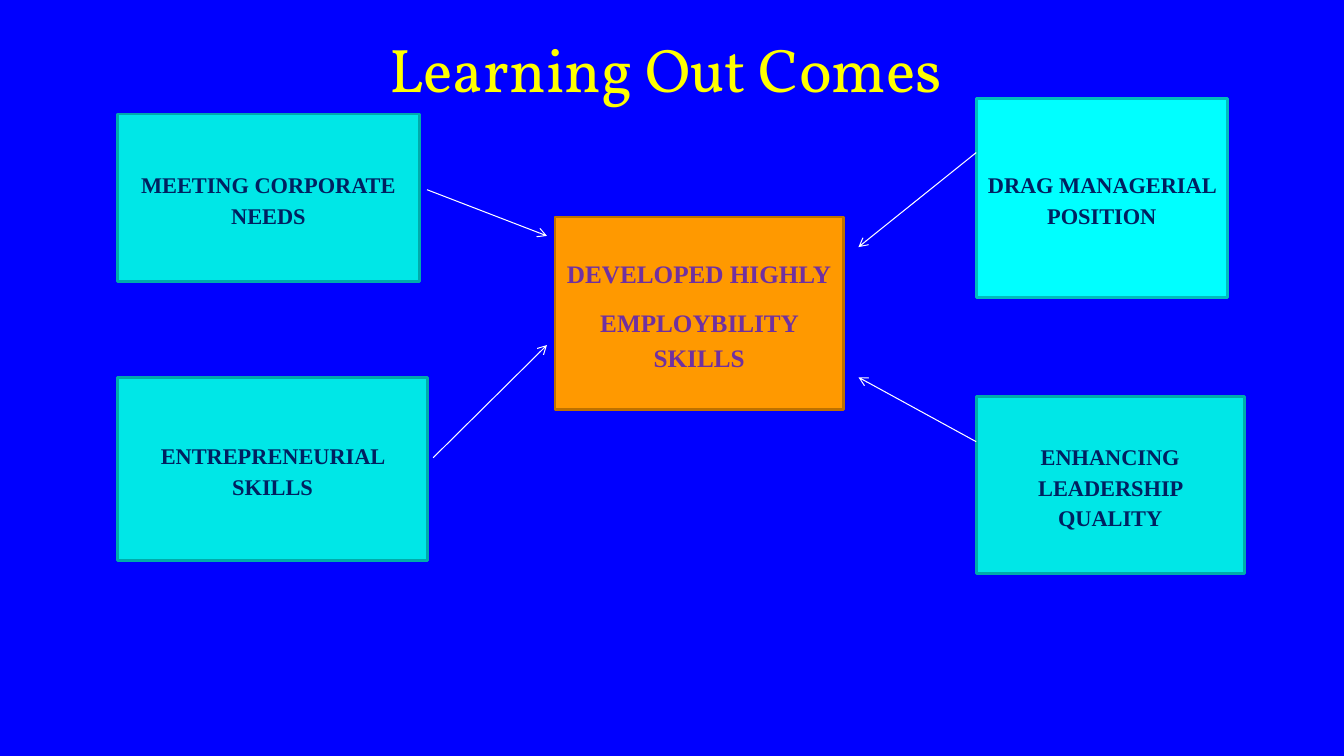
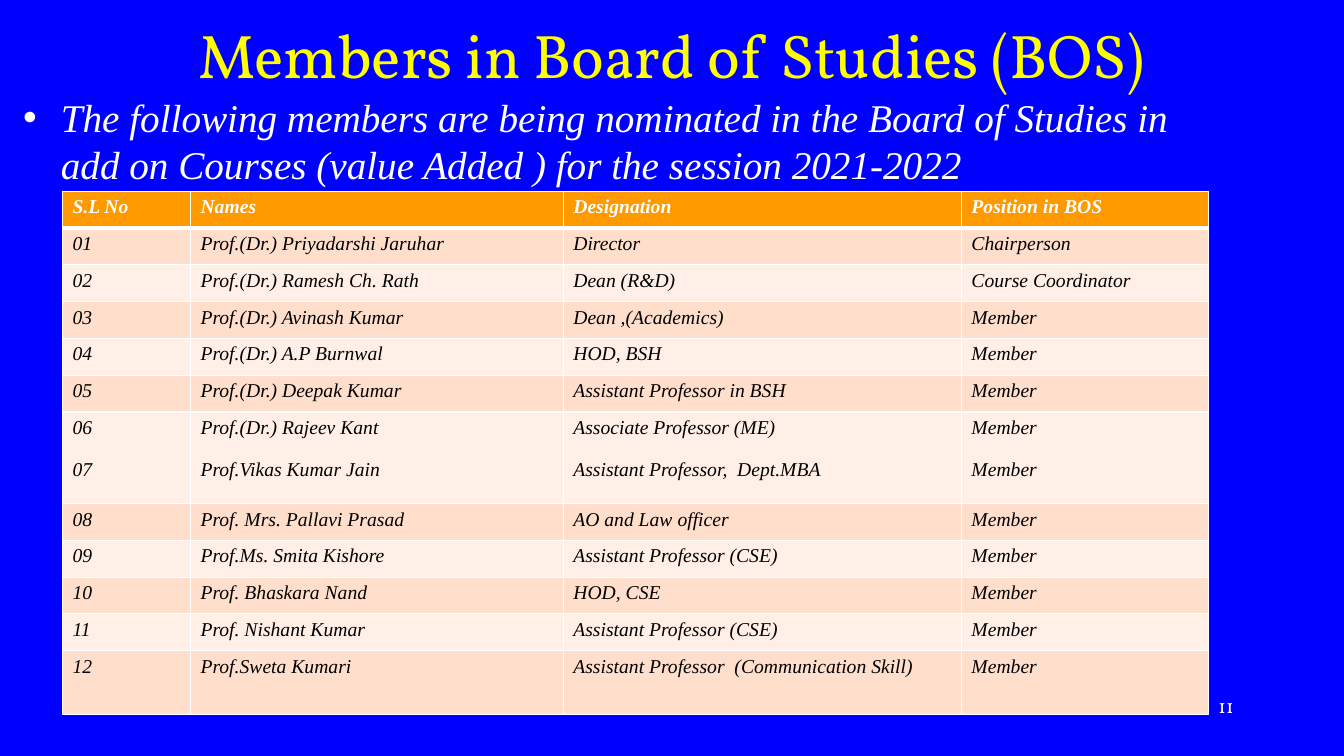
import pptx
import pptx.dml.color
import pptx.enum.shapes
import pptx.enum.text
import pptx.oxml.ns
import pptx.util
from lxml import etree

Pt = pptx.util.Pt
RGBColor = pptx.dml.color.RGBColor
Align = pptx.enum.text.PP_ALIGN
Anchor = pptx.enum.text.MSO_ANCHOR
qn = pptx.oxml.ns.qn

BLUE = RGBColor(0x00, 0x00, 0xFF)
YELLOW = RGBColor(0xFF, 0xFF, 0x00)
WHITE = RGBColor(0xFF, 0xFF, 0xFF)
BLACK = RGBColor(0x00, 0x00, 0x00)
NAVY = RGBColor(0x00, 0x20, 0x60)
PURPLE = RGBColor(0x70, 0x30, 0xA0)
ORANGE = RGBColor(0xFF, 0x99, 0x00)
BROWN = RGBColor(0xBD, 0x71, 0x00)
CYAN = RGBColor(0x00, 0xFF, 0xFF)
CYAN_EDGE = RGBColor(0x00, 0xBD, 0xBD)
TEAL = RGBColor(0x00, 0xE7, 0xE7)
TEAL_EDGE = RGBColor(0x00, 0xAB, 0xAB)
PEACH = RGBColor(0xFF, 0xDE, 0xCC)
PALE_PEACH = RGBColor(0xFF, 0xEF, 0xE7)

TITLE_FONT = "Vollkorn"
TEXT_FONT = "Times New Roman"

OUTCOMES = [
    (["DEVELOPED HIGHLY", "EMPLOYBILITY SKILLS"], (312.4, 71.5, 206, 137.5), ORANGE, BROWN, PURPLE, 18),
    (["DRAG MANAGERIAL POSITION"], (613.3, -13, 179.5, 142), CYAN, CYAN_EDGE, NAVY, 16),
    (["ENHANCING LEADERSHIP QUALITY"], (613.3, 200, 191.5, 126), TEAL, TEAL_EDGE, NAVY, 16),
    (["MEETING CORPORATE NEEDS"], (0, -2, 215.5, 119.5), TEAL, TEAL_EDGE, NAVY, 16),
    (["ENTREPRENEURIAL SKILLS"], (0, 186, 221.5, 131), TEAL, TEAL_EDGE, NAVY, 16),
]
ARROWS = [
    ((221, 52), (306.7, 85)),
    ((613.3, 25.5), (529.2, 93)),
    ((225.4, 243.5), (306.7, 163)),
    ((613.3, 232), (529.2, 186)),
]

HEADINGS = ["S.L No", "Names", "Designation", "Position in BOS"]
MEMBERS = [
    ["01", "Prof.(Dr.) Priyadarshi Jaruhar", "Director", "Chairperson"],
    ["02", "Prof.(Dr.) Ramesh Ch. Rath", "Dean (R&D)", "Course Coordinator"],
    ["03", "Prof.(Dr.) Avinash Kumar", "Dean ,(Academics)", "Member"],
    ["04", "Prof.(Dr.) A.P Burnwal", "HOD, BSH", "Member"],
    ["05", "Prof.(Dr.) Deepak Kumar", "Assistant Professor in BSH", "Member"],
    ["06\n07", "Prof.(Dr.) Rajeev Kant\nProf.Vikas Kumar Jain",
     "Associate Professor (ME)\nAssistant Professor,  Dept.MBA", "Member\nMember"],
    ["08", "Prof. Mrs. Pallavi Prasad", "AO and Law officer", "Member"],
    ["09", "Prof.Ms. Smita Kishore", "Assistant Professor (CSE)", "Member"],
    ["10", "Prof. Bhaskara Nand", "HOD, CSE", "Member"],
    ["11", "Prof. Nishant Kumar", "Assistant Professor (CSE)", "Member"],
    ["12", "Prof.Sweta Kumari", "Assistant Professor  (Communication Skill)", "Member"],
]
COLUMN_WIDTHS = [91.5, 266.3, 284.4, 176.4]
ROW_HEIGHT = 26.3
TALL_ROWS = {6: 65.4, 11: 45.8}


def points(box):
    """Turn a tuple of numbers into lengths."""
    return [Pt(value) for value in box]


def add_run(paragraph, text, size, color, font=TEXT_FONT, bold=False, italic=False):
    """Add one styled run to a paragraph."""
    run = paragraph.add_run()
    run.text = text
    run.font.name = font
    run.font.size = Pt(size)
    run.font.bold = bold
    run.font.italic = italic
    run.font.color.rgb = color


def add_paragraphs(frame, lines):
    """Yield a paragraph of the frame with each line of text."""
    for index, line in enumerate(lines):
        yield (frame.add_paragraph() if index else frame.paragraphs[0]), line


def add_text_box(slide, box, anchor=Anchor.TOP):
    """Add a wrapping text box and return its frame."""
    frame = slide.shapes.add_textbox(*points(box)).text_frame
    frame.word_wrap = True
    frame.vertical_anchor = anchor
    return frame


def add_titled_slide(presentation, title, top, height):
    """Add a blue slide with a centred yellow title."""
    slide = presentation.slides.add_slide(presentation.slide_layouts[6])
    slide.background.fill.solid()
    slide.background.fill.fore_color.rgb = BLUE
    paragraph = add_text_box(slide, (72, top, 816, height), Anchor.MIDDLE).paragraphs[0]
    paragraph.alignment = Align.CENTER
    paragraph.space_before = Pt(24)
    add_run(paragraph, title, 44, YELLOW, TITLE_FONT)
    return slide


def add_outcome(slide, lines, box, fill, edge, color, size):
    """Add one outlined box with bold centred text."""
    shape = slide.shapes.add_shape(pptx.enum.shapes.MSO_SHAPE.RECTANGLE, *points(box))
    shape.shadow.inherit = False
    shape.fill.solid()
    shape.fill.fore_color.rgb = fill
    shape.line.color.rgb = edge
    shape.line.width = Pt(2)
    frame = shape.text_frame
    frame.word_wrap = True
    frame.vertical_anchor = Anchor.MIDDLE
    for paragraph, line in add_paragraphs(frame, lines):
        paragraph.alignment = Align.CENTER
        paragraph.line_spacing = 1.15
        paragraph.space_after = Pt(10)
        add_run(paragraph, line, size, color, bold=True)


def add_arrow(slide, start, end):
    """Add a thin white arrow."""
    connector = slide.shapes.add_connector(
        pptx.enum.shapes.MSO_CONNECTOR.STRAIGHT, *points(start + end))
    connector.line.color.rgb = WHITE
    connector.line.width = Pt(0.75)
    properties = connector.element.spPr
    etree.SubElement(properties.find(qn("a:ln")), qn("a:tailEnd"), type="arrow")
    etree.SubElement(properties, qn("a:effectLst"))


def add_outcome_diagram(slide, left, top):
    """Place the skill boxes and the arrows to the centre."""
    for lines, (x, y, width, height), *style in OUTCOMES:
        add_outcome(slide, lines, (left + x, top + y, width, height), *style)
    for start, end in ARROWS:
        add_arrow(slide, *[(left + x, top + y) for x, y in (start, end)])


def add_bullet(slide, box, text):
    """Add an italic bulleted statement."""
    paragraph = add_text_box(slide, box).paragraphs[0]
    paragraph.space_before = Pt(5.6)
    properties = paragraph._p.get_or_add_pPr()
    properties.set("marL", str(Pt(27)))
    properties.set("indent", str(-Pt(27)))
    etree.SubElement(properties, qn("a:buFont"), typeface="Arial")
    etree.SubElement(properties, qn("a:buChar"), char="•")
    add_run(paragraph, text, 28, WHITE, italic=True)


def add_borders(cell, bottom):
    """Draw white borders around a cell."""
    properties = cell._tc.get_or_add_tcPr()
    for side, width in (("L", 1), ("R", 1), ("T", 1), ("B", bottom)):
        line = etree.SubElement(properties, qn("a:ln" + side), w=str(Pt(width)))
        fill = etree.SubElement(line, qn("a:solidFill"))
        etree.SubElement(fill, qn("a:srgbClr"), val=str(WHITE))


def fill_cell(cell, text, fill, color, header):
    """Write and colour one table cell."""
    add_borders(cell, 3 if header else 1)
    cell.fill.solid()
    cell.fill.fore_color.rgb = fill
    for paragraph, line in add_paragraphs(cell.text_frame, text.split("\n")):
        if paragraph is not cell.text_frame.paragraphs[0] and line != text.split("\n")[0]:
            paragraph.space_before = Pt(14.6)
        add_run(paragraph, line, 14, color, bold=header, italic=True)
    for paragraph in cell.text_frame.paragraphs[1:]:
        paragraph.space_before = Pt(14.6)


def add_member_table(slide, left, top):
    """Add the table of board members."""
    rows = [HEADINGS] + MEMBERS
    heights = [TALL_ROWS.get(index, ROW_HEIGHT) for index in range(len(rows))]
    box = points((left, top, sum(COLUMN_WIDTHS), sum(heights)))
    table = slide.shapes.add_table(len(rows), len(HEADINGS), *box).table
    table.first_row = table.horz_banding = False
    for column, width in zip(table.columns, COLUMN_WIDTHS):
        column.width = Pt(width)
    for index, texts in enumerate(rows):
        table.rows[index].height = Pt(heights[index])
        header = index == 0
        fill = ORANGE if header else PEACH if index % 2 else PALE_PEACH
        for cell, text in zip(table.rows[index].cells, texts):
            fill_cell(cell, text, fill, WHITE if header else BLACK, header)


def add_page_number(slide, box, number):
    """Add the page number at the lower right."""
    paragraph = add_text_box(slide, box).paragraphs[0]
    paragraph.alignment = Align.RIGHT
    add_run(paragraph, number, 14, WHITE, TITLE_FONT)


def main():
    """Build and save both slides."""
    presentation = pptx.Presentation()
    presentation.slide_width = Pt(960)
    presentation.slide_height = Pt(540)

    outcomes = add_titled_slide(presentation, "Learning Out Comes ", 23, 51)
    add_outcome_diagram(outcomes, 84, 83.5)

    members = add_titled_slide(presentation, "Members in Board of Studies (BOS)", 11, 55.5)
    add_bullet(members, (9.4, 63.4, 878.5, 468),
               "The following members are being nominated in the Board of Studies in "
               "add on Courses (value Added ) for the session 2021-2022")
    add_page_number(members, (688.3, 491.8, 200, 36), "11")
    add_member_table(members, 44.6, 136.6)

    presentation.save("out.pptx")


if __name__ == "__main__":
    main()
